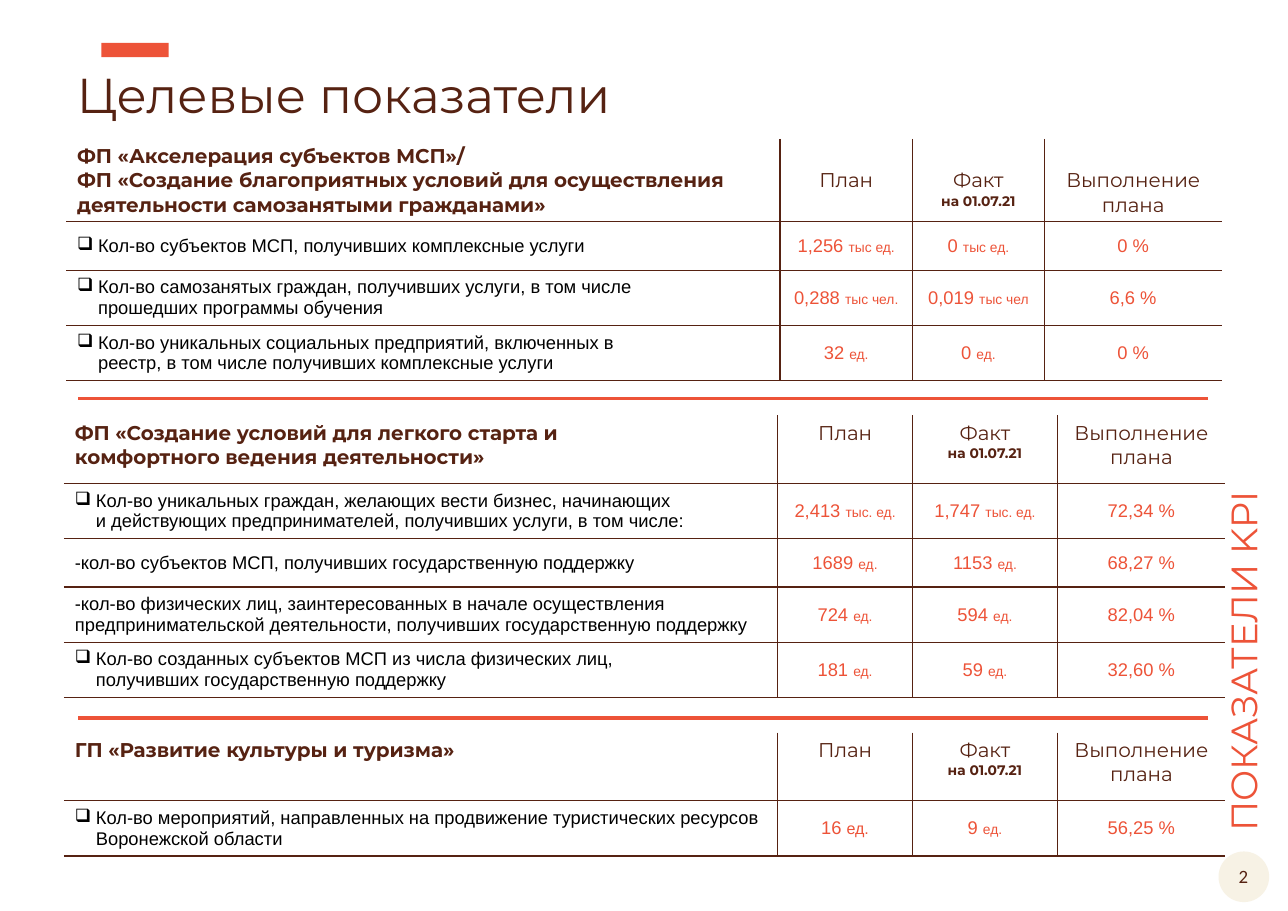
from lxml import etree
from pptx import Presentation
from pptx.dml.color import RGBColor
from pptx.enum.shapes import MSO_CONNECTOR, MSO_SHAPE
from pptx.enum.text import MSO_ANCHOR, PP_ALIGN
from pptx.oxml.ns import qn
from pptx.util import Inches, Pt

CENTER = PP_ALIGN.CENTER
LEFT = PP_ALIGN.LEFT
MIDDLE = MSO_ANCHOR.MIDDLE
STRAIGHT = MSO_CONNECTOR.STRAIGHT
OVAL = MSO_SHAPE.OVAL
RECTANGLE = MSO_SHAPE.RECTANGLE

BROWN = "562212"
ORANGE = "ED5338"
BLACK = "000000"
CREAM = "F7F2E5"
HEADING_FONT = "Montserrat"
BODY_FONT = "Arial"

WIDE_COLUMNS = [6.48, 1.22, 1.32, 1.52]
SECTIONS = [
    {
        "place": (0.6, 1.26),
        "columns": [6.48, 1.2, 1.2, 1.61],
        "heights": [0.75, 0.44, 0.5, 0.5],
        "label_margin": 0.27,
        "title": "ФП «Акселерация субъектов МСП»/\nФП «Создание благоприятных условий для осуществления деятельности самозанятыми гражданами»",
        "rows": [
            ("Кол-во субъектов МСП, получивших комплексные услуги",
             ("1,256", "тыс ед."), ("0", "тыс ед."), ("0 %",)),
            ("Кол-во самозанятых граждан, получивших услуги, в том числе\vпрошедших программы обучения",
             ("0,288", "тыс чел."), ("0,019", "тыс чел"), ("6,6 %",)),
            ("Кол-во уникальных социальных предприятий, включенных в\vреестр, в том числе получивших комплексные услуги",
             ("32", "ед."), ("0", "ед."), ("0 %",)),
        ],
    },
    {
        "place": (0.58, 3.77),
        "columns": WIDE_COLUMNS,
        "heights": [0.62, 0.5, 0.44, 0.5, 0.5],
        "label_margin": 0.05,
        "title": "ФП «Создание условий для легкого старта и\nкомфортного ведения деятельности»",
        "rows": [
            ("Кол-во уникальных граждан, желающих вести бизнес, начинающих\vи действующих предпринимателей, получивших услуги, в том числе:",
             ("2,413", "тыс. ед."), ("1,747", "тыс. ед."), ("72,34 %",)),
            ("-кол-во субъектов МСП, получивших государственную поддержку",
             ("1689", "ед."), ("1153", "ед."), ("68,27 %",)),
            ("-кол-во физических лиц, заинтересованных в начале осуществления предпринимательской деятельности, получивших государственную поддержку",
             ("724", "ед."), ("594", "ед."), ("82,04 %",)),
            ("Кол-во созданных субъектов МСП из числа физических лиц,\vполучивших государственную поддержку",
             ("181", "ед."), ("59", "ед."), ("32,60 %",)),
        ],
    },
    {
        "place": (0.58, 6.65),
        "columns": WIDE_COLUMNS,
        "heights": [0.62, 0.5],
        "label_margin": 0.05,
        "title": "ГП «Развитие культуры и туризма»",
        "rows": [
            ("Кол-во мероприятий, направленных на продвижение туристических ресурсов Воронежской области",
             ("16", "ед.", 10.5), ("9", "ед."), ("56,25 %",)),
        ],
    },
]
COLUMN_LABELS = ["План", "Факт\nна 01.07.21", "Выполнение плана"]


def rgb(color):
    return RGBColor.from_string(color)


def set_font(font, name, size, color, bold=False):
    font.name = name
    font.size = Pt(size)
    font.bold = bold
    font.color.rgb = rgb(color)


def add_filled_shape(slide, kind, left, top, width, height, color):
    shape = slide.shapes.add_shape(kind, Inches(left), Inches(top), Inches(width), Inches(height))
    shape.shadow.inherit = False
    shape.fill.solid()
    shape.fill.fore_color.rgb = rgb(color)
    shape.line.fill.background()


def add_text(slide, text, left, top, width, height, size, color,
             font=HEADING_FONT, alignment=LEFT, spacing=0.85, rotation=0):
    box = slide.shapes.add_textbox(Inches(left), Inches(top), Inches(width), Inches(height))
    box.rotation = rotation
    box.text_frame.word_wrap = True
    paragraph = box.text_frame.paragraphs[0]
    paragraph.text = text
    paragraph.alignment = alignment
    paragraph.line_spacing = spacing
    set_font(paragraph.font, font, size, color)


def add_divider(slide, top):
    line = slide.shapes.add_connector(STRAIGHT, Inches(0.71), Inches(top), Inches(10.96), Inches(top))
    line.line.color.rgb = rgb(ORANGE)
    line.line.width = Pt(2.25)
    etree.SubElement(line._element.spPr, qn("a:effectLst"))


def set_borders(cell, visible):
    properties = cell._tc.get_or_add_tcPr()
    for side in "LRTB":
        border = etree.SubElement(properties, qn(f"a:ln{side}"), w=str(Pt(1)))
        if side in visible:
            fill = etree.SubElement(border, qn("a:solidFill"))
            etree.SubElement(fill, qn("a:srgbClr"), val=BROWN)
        else:
            etree.SubElement(border, qn("a:noFill"))
    cell.fill.background()


def add_bullet(paragraph):
    properties = paragraph._p.get_or_add_pPr()
    properties.set("marL", str(Inches(0.19)))
    properties.set("indent", str(-Inches(0.19)))
    etree.SubElement(properties, qn("a:buChar"), char="❑")


def write_title(cell, text):
    cell.text_frame.text = text
    for paragraph in cell.text_frame.paragraphs:
        set_font(paragraph.font, HEADING_FONT, 13, BROWN, True)


def write_label(cell, text, margin):
    cell.margin_top = Inches(margin)
    cell.text_frame.text = text
    for index, paragraph in enumerate(cell.text_frame.paragraphs):
        paragraph.alignment = CENTER
        set_font(paragraph.font, HEADING_FONT, 9 if index else 13, BROWN, index > 0)


def write_indicator(cell, text):
    cell.vertical_anchor = MIDDLE
    paragraph = cell.text_frame.paragraphs[0]
    paragraph.text = text
    if not text.startswith("-"):
        add_bullet(paragraph)
    set_font(paragraph.font, BODY_FONT, 12, BLACK)


def write_value(cell, number, unit="", unit_size=9):
    cell.vertical_anchor = MIDDLE
    paragraph = cell.text_frame.paragraphs[0]
    paragraph.alignment = CENTER
    parts = [(f"{number} ", 12), (unit, unit_size)] if unit else [(number, 12)]
    for text, size in parts:
        run = paragraph.add_run()
        run.text = text
        set_font(run.font, BODY_FONT, size, ORANGE)


def add_indicator_table(slide, section):
    columns, heights = section["columns"], section["heights"]
    left, top = section["place"]
    frame = slide.shapes.add_table(len(heights), len(columns), Inches(left), Inches(top),
                                   Inches(sum(columns)), Inches(sum(heights)))
    table = frame.table
    table.first_row = False
    table.horz_banding = False
    for column, width in zip(table.columns, columns):
        column.width = Inches(width)
    for row_index, (row, height) in enumerate(zip(table.rows, heights)):
        row.height = Inches(height)
        for column_index, cell in enumerate(row.cells):
            visible = "B" + "T" * (row_index > 0) + "L" * (column_index > 0)
            visible += "R" * (column_index < len(columns) - 1)
            set_borders(cell, visible)
    write_title(table.cell(0, 0), section["title"])
    for column_index, label in enumerate(COLUMN_LABELS, 1):
        write_label(table.cell(0, column_index), label, section["label_margin"])
    for row_index, (indicator, *values) in enumerate(section["rows"], 1):
        write_indicator(table.cell(row_index, 0), indicator)
        for column_index, value in enumerate(values, 1):
            write_value(table.cell(row_index, column_index), *value)


def main():
    presentation = Presentation()
    presentation.slide_width = Inches(11.69)
    presentation.slide_height = Inches(8.27)
    slide = presentation.slides.add_slide(presentation.slide_layouts[6])
    add_filled_shape(slide, OVAL, 11.06, 7.73, 0.46, 0.46, CREAM)
    add_text(slide, "2", 11.03, 7.8, 0.51, 0.31, 12.3, BROWN, "Calibri", CENTER, 1.0)
    add_filled_shape(slide, RECTANGLE, 0.92, 0.39, 0.61, 0.13, ORANGE)
    add_text(slide, "ПОКАЗАТЕЛИ KPI", 9.53, 5.64, 3.57, 0.45, 24, ORANGE, rotation=270)
    add_text(slide, "Целевые показатели", 0.6, 0.62, 10.48, 0.56, 32, BROWN)
    for section in SECTIONS:
        add_indicator_table(slide, section)
    for top in (3.62, 6.52):
        add_divider(slide, top)
    presentation.save("out.pptx")


if __name__ == "__main__":
    main()
